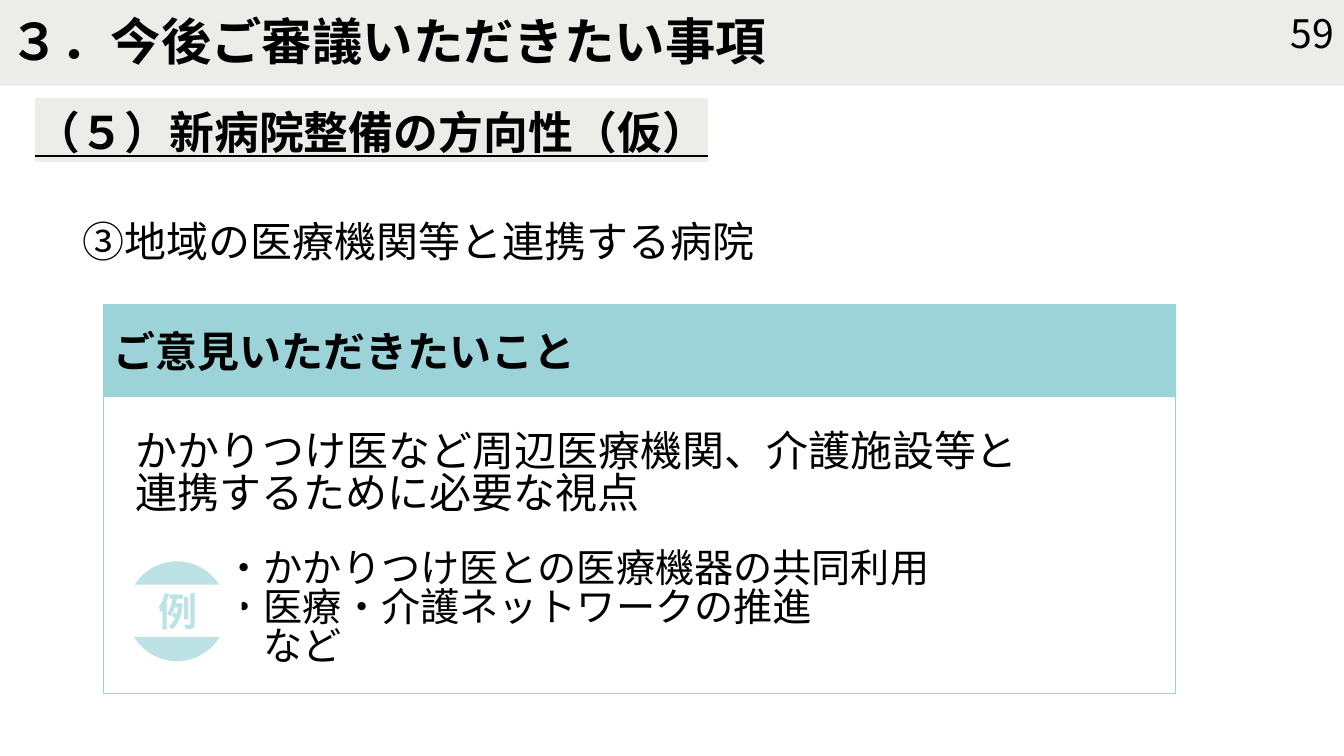
"""Build the slide on points for review about the new hospital."""
from lxml.etree import SubElement
from pptx import Presentation
from pptx.dml.color import RGBColor
from pptx.enum.shapes import MSO_SHAPE as Shape
from pptx.enum.text import MSO_ANCHOR as Anchor, PP_ALIGN as Align
from pptx.oxml import parse_xml
from pptx.oxml.ns import nsdecls, qn
from pptx.util import Pt

SANS, MONO = "Noto Sans CJK JP", "Noto Sans Mono"
BLACK, WHITE, GREY, TEAL, PALE = "000000", "FFFFFF", "ECEDE8", "9BD3D9", "BCE2E6"

TITLE = ["３．今後ご審議いただきたい事項"]
PAGE = ["59"]
HEAD = ["（５）新病院整備の方向性（仮）"]
TOPIC = ["③地域の医療機関等と連携する病院"]
ASK = ["ご意見いただきたいこと"]
VIEW = ["かかりつけ医など周辺医療機関、介護施設等と", "連携するために必要な視点"]
CASES = ["・かかりつけ医との医療機器の共同利用", "・医療・介護ネットワークの推進", "　など"]
MARK = ["例"]

deck = Presentation()
deck.slide_width, deck.slide_height = Pt(960), Pt(540)
slide = deck.slides.add_slide(deck.slide_layouts[6])


def color(code):
    return RGBColor.from_string(code)


def shape(box, kind=Shape.RECTANGLE, fill=None, line=None):
    item = slide.shapes.add_shape(kind, *map(Pt, box))
    item.shadow.inherit = False
    if fill:
        item.fill.solid()
        item.fill.fore_color.rgb = color(fill)
    else:
        item.fill.background()
    if line:
        item.line.color.rgb = color(line)
        item.line.width = Pt(1)
    else:
        item.line.fill.background()
    return item


def write(lines, box=None, item=None, size=30, font=SANS, ink=BLACK, bold=False,
          under=False, light=None, align=Align.LEFT, anchor=Anchor.MIDDLE, pitch=None):
    item = item or slide.shapes.add_textbox(*map(Pt, box))
    frame = item.text_frame
    frame.word_wrap = True
    frame.vertical_anchor = anchor
    for i, line in enumerate(lines):
        para = frame.add_paragraph() if i else frame.paragraphs[0]
        para.alignment = align
        if pitch:
            para.line_spacing = pitch
        run = para.add_run()
        run.text = line
        face = run.font
        face.size, face.bold, face.underline = Pt(size), bold, under
        face.color.rgb = color(ink)
        face.name = font
        props = run._r.get_or_add_rPr()
        SubElement(props, qn("a:ea")).set("typeface", font)
        if light:
            props.find(qn("a:solidFill")).addnext(parse_xml(
                f'<a:highlight {nsdecls("a")}><a:srgbClr val="{light}"/></a:highlight>'))


left, top, width = 74, 217.5, 765.5
write(TITLE, item=shape((0, -4.3, 960, 65.5), fill=GREY), size=36, bold=True)
write(PAGE, (726, 9.4, 234, 28.8), size=28, align=Align.RIGHT)
write(HEAD, (18, 71.3, 924, 46), size=32, bold=True, under=True, light=GREY,
      anchor=Anchor.TOP)
write(TOPIC, (51.8, 150.5, 833, 44), anchor=Anchor.TOP)
write(VIEW, (90, 303, 780.5, 72.7), pitch=0.84)
write(CASES, (153.4, 393.8, 736, 84.2), size=28, pitch=0.83)
write(ASK, item=shape((left, top, width, 66.2), fill=TEAL), bold=True)
shape((left, top, width, 278), line=TEAL)
shape((90.7, 401, 71.3, 71.3), Shape.OVAL, fill=PALE)
write(MARK, item=shape((82, 417.6, 90.7, 37.4), fill=WHITE), size=28, font=MONO,
      ink=PALE, bold=True, align=Align.CENTER)

deck.save("out.pptx")
